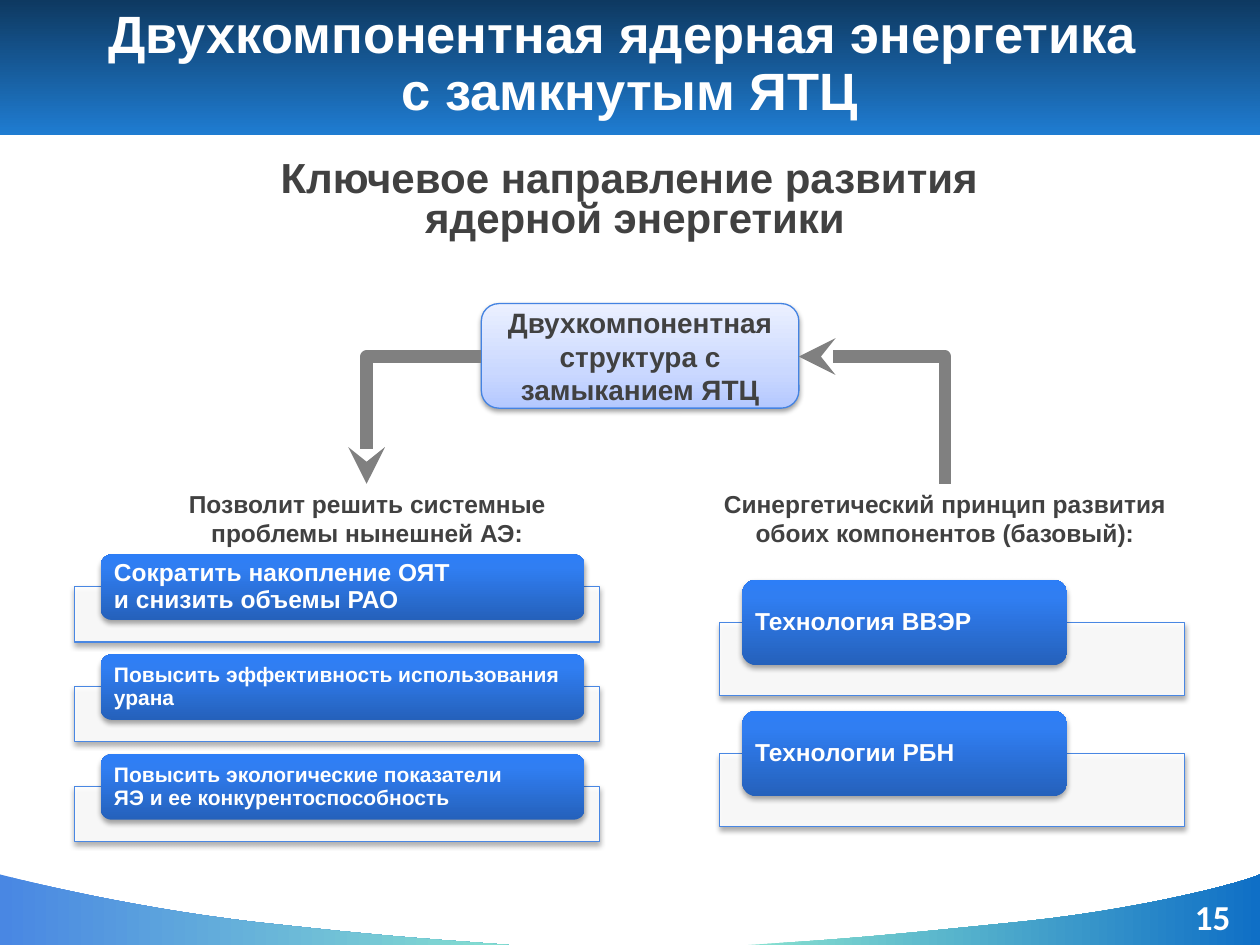
from copy import deepcopy

from lxml.etree import SubElement as Sub
from pptx import Presentation
from pptx.dml.color import RGBColor as RGB
from pptx.enum.shapes import MSO_CONNECTOR as Conn, MSO_SHAPE as Kind
from pptx.enum.text import MSO_ANCHOR as Anchor, PP_ALIGN as Align
from pptx.oxml.ns import qn
from pptx.util import Inches, Pt

WHITE = RGB(0xFF, 0xFF, 0xFF)
BLACK = RGB(0, 0, 0)
DARK = RGB(0x41, 0x41, 0x41)
GRAY = RGB(0x80, 0x80, 0x80)
EDGE = RGB(0x49, 0x87, 0xE3)
RIM = RGB(0x44, 0x83, 0xE2)
NAVY = RGB(0x0E, 0x39, 0x61)
BLUE = RGB(0x1F, 0x7C, 0xD1)
TEAL = RGB(0x85, 0xDF, 0xD0)
DEEP = RGB(0x0F, 0x6F, 0xC6)
PALE = ((0, RGB(0xB4, 0xC8, 0xFF)), (35, RGB(0xCA, 0xD8, 0xFF)), (100, RGB(0xEB, 0xF0, 0xFF)))
VIVID = ((0, RGB(0x25, 0x61, 0xBB)), (80, RGB(0x30, 0x7E, 0xF2)), (100, RGB(0x2D, 0x7E, 0xF7)))
COLS, ROWS = 100, 75


def write(shape, text, size=14, color=DARK, font="Arial", align=Align.CENTER,
          anchor=Anchor.TOP, space=None, pad=(0.07, 0.04)):
    frame = shape.text_frame
    frame.word_wrap = True
    frame.vertical_anchor = anchor
    frame.margin_left = frame.margin_right = Inches(pad[0])
    frame.margin_top = frame.margin_bottom = Inches(pad[1])
    para = frame.paragraphs[0]
    para.text = text
    para.alignment = align
    if space:
        para.line_spacing = space
    for run in para.runs:
        run.font.name, run.font.size, run.font.bold = font, Pt(size), True
        run.font.color.rgb = color
    for gap in para._p.findall(qn("a:br")):
        gap.append(deepcopy(para.runs[0]._r.rPr))


def curve(start, *parts, steps=16):
    """Return points along joined cubic curves."""
    pts = [start]
    for b, c, d in parts:
        a = pts[-1]
        for i in range(1, steps + 1):
            t = i / steps
            u = 1 - t
            pts.append(tuple(u**3 * p + 3 * u * u * t * q + 3 * u * t * t * r + t**3 * s
                             for p, q, r, s in zip(a, b, c, d)))
    return pts


class Deck:
    """Slide painter that places elements on a grid of 100 by 75 cells."""

    def __init__(self):
        self.prs = Presentation()
        self.prs.slide_width, self.prs.slide_height = Inches(10), Inches(7.5)
        self.wide = self.prs.slide_width / COLS
        self.high = self.prs.slide_height / ROWS
        self.shapes = self.prs.slides.add_slide(self.prs.slide_layouts[6]).shapes

    def spot(self, *cells):
        return [round(c * (self.high if i % 2 else self.wide)) for i, c in enumerate(cells)]

    def blend(self, shape, stops, angle):
        shape.shadow.inherit = False
        shape.line.fill.background()
        shape.fill.gradient()
        shape.fill.gradient_angle = angle
        bag = shape._element.spPr.find(qn("a:gradFill")).find(qn("a:gsLst"))
        bag[:] = []
        for pos, color in stops:
            stop = Sub(bag, qn("a:gs"), pos=str(pos * 1000))
            Sub(stop, qn("a:srgbClr"), val=str(color))

    def shade(self, shape, alpha=35, drop=1.8):
        shape.shadow.inherit = False
        bag = shape._element.spPr.find(qn("a:effectLst"))
        cast = Sub(bag, qn("a:outerShdw"), blurRad=str(Pt(3.1)), dist=str(Pt(drop)),
                   dir="5400000", rotWithShape="0")
        tint = Sub(cast, qn("a:srgbClr"), val=str(BLACK))
        Sub(tint, qn("a:alpha"), val=str(alpha * 1000))

    def edge(self, shape, color):
        shape.line.color.rgb = color
        shape.line.width = Pt(0.75)

    def panel(self, cells, stops, angle, kind=Kind.ROUNDED_RECTANGLE):
        shape = self.shapes.add_shape(kind, *self.spot(*cells))
        self.blend(shape, stops, angle)
        return shape

    def tray(self, cells):
        shape = self.shapes.add_shape(Kind.RECTANGLE, *self.spot(*cells))
        shape.fill.solid()
        shape.fill.fore_color.rgb = WHITE
        tint = shape._element.spPr.find(qn("a:solidFill"))[0]
        Sub(tint, qn("a:alpha"), val="90000")
        self.edge(shape, EDGE)
        self.shade(shape)

    def card(self, tray, tab, text, size, pad):
        self.tray(tray)
        shape = self.panel(tab, VIVID, 90)
        self.shade(shape)
        write(shape, text, size=size, color=WHITE, align=Align.LEFT,
              anchor=Anchor.MIDDLE, space=0.9, pad=(pad, 0))

    def label(self, cells, text, **style):
        write(self.shapes.add_textbox(*self.spot(*cells)), text, **style)

    def wave(self, pts, stops):
        pen = self.shapes.build_freeform(*self.spot(*pts[0]))
        pen.add_line_segments([self.spot(*p) for p in pts[1:]], close=True)
        self.blend(pen.convert_to_shape(), stops, 0)

    def arrow(self, start, end, tip):
        line = self.shapes.add_connector(Conn.ELBOW, *self.spot(*start, *end))
        line.line.color.rgb = GRAY
        line.line.width = Pt(7)
        body = line._element.spPr
        body.find(qn("a:prstGeom")).set("prst", "bentConnector2")
        Sub(body.find(qn("a:ln")), qn(tip), type="stealth")
        Sub(body, qn("a:effectLst"))


def main():
    deck = Deck()
    deck.panel((0, 0, 100, 10.7), ((0, NAVY), (100, BLUE)), 270, Kind.RECTANGLE)
    left = curve((40.4, 75), ((33.7, 74.5), (31.4, 74.4), (20.4, 73.2)),
                 ((9.2, 71.9), (0, 69.4), (0, 69.4)))
    deck.wave(left + [(0, 75)], ((0, EDGE), (100, TEAL)))
    right = curve((59.4, 75), ((66, 74.6), (68.8, 74.4), (79.6, 73.3)),
                  ((90.5, 72.3), (99.1, 69.9), (100, 69.4)))
    deck.wave(right + [(100, 75)], ((2, TEAL), (100, DEEP)))

    deck.label((0, -0.3, 100, 10.9), "Двухкомпонентная ядерная энергетика \nс замкнутым ЯТЦ",
               size=30, color=WHITE, anchor=Anchor.MIDDLE, space=0.9, pad=(0.04, 0.04))
    deck.label((93.3, 71.1, 5.9, 3.5), "15", size=20, color=WHITE, font="Calibri", pad=(0, 0))
    deck.label((13, 12.3, 74.8, 7.5), "Ключевое направление развития \nядерной энергетики",
               size=24, space=0.8, pad=(0.1, 0.05))

    core = deck.panel((38.2, 24.1, 25.2, 8.3), PALE, 90)
    deck.edge(core, RIM)
    deck.shade(core, 38, 1.6)
    write(core, "Двухкомпонентная структура с замыканием ЯТЦ", size=16, anchor=Anchor.MIDDLE,
          pad=(0.03, 0))
    deck.label((12.3, 38.4, 33.7, 5.5), "Позволит решить системные проблемы нынешней АЭ:")
    deck.label((56, 38.4, 38, 5.5),
               "Синергетический принцип развития обоих компонентов (базовый):")

    goals = (("Сократить накопление ОЯТ \nи снизить объемы РАО", 14),
             ("Повысить эффективность использования урана", 12),
             ("Повысить экологические показатели \nЯЭ и ее конкурентоспособность", 12))
    for i, (text, size) in enumerate(goals):
        top = 44 + 7.93 * i
        deck.card((5.9, top + 2.55, 41.7, 4.4), (8, top, 38.4, 5.2), text, size, 0.08)
    for i, text in enumerate(("Технология ВВЭР", "Технологии РБН")):
        top = 46 + 10.4 * i
        deck.card((57.1, top + 3.4, 36.9, 5.8), (58.9, top, 25.8, 6.8), text, 14, 0.07)

    deck.arrow((63.4, 28.3), (75, 38.4), "a:headEnd")
    deck.arrow((38.2, 28.3), (29.1, 38.4), "a:tailEnd")
    deck.prs.save("out.pptx")


if __name__ == "__main__":
    main()
